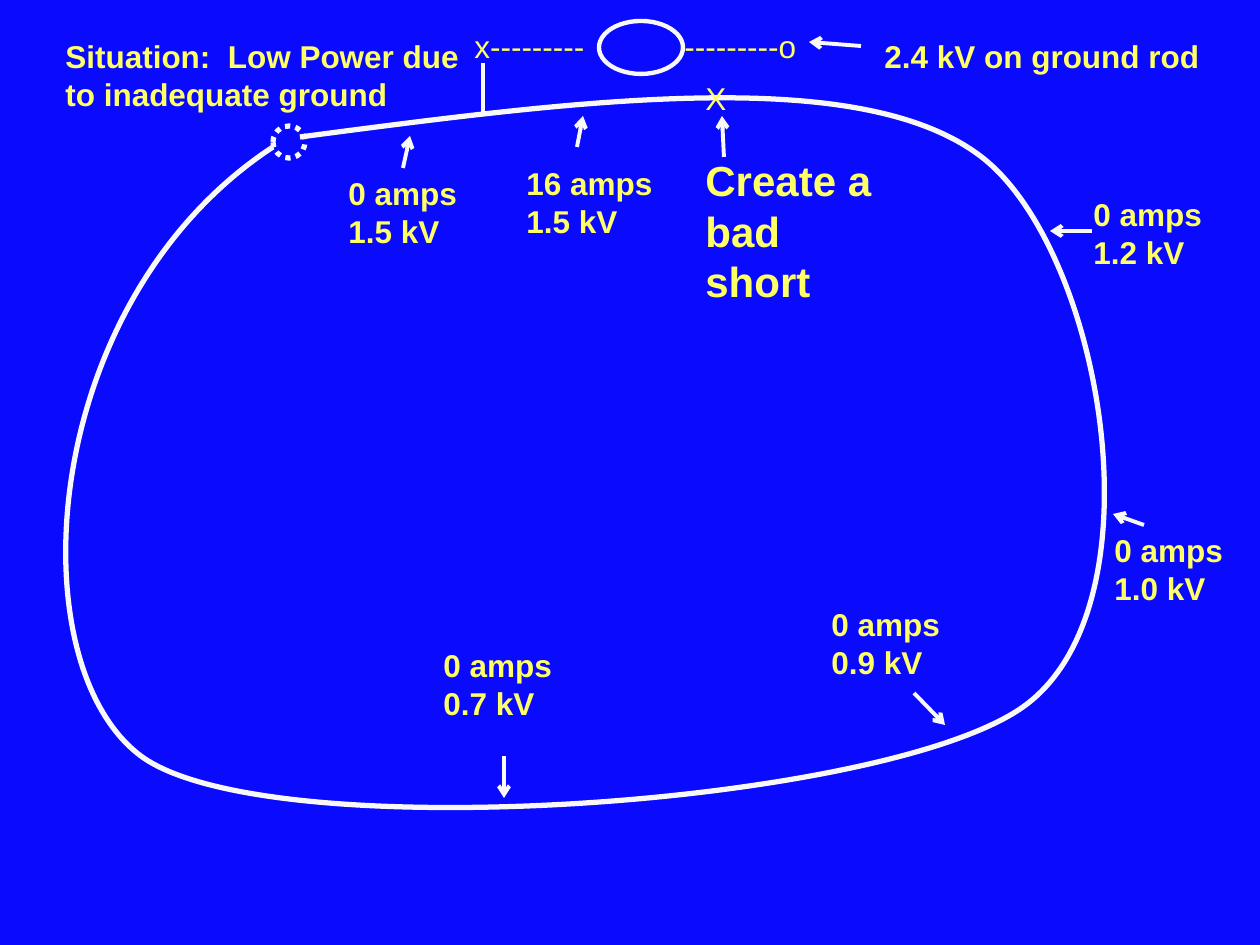
from lxml.etree import SubElement
from pptx import Presentation
from pptx.dml.color import RGBColor
from pptx.enum.dml import MSO_LINE
from pptx.enum.shapes import MSO_CONNECTOR, MSO_SHAPE
from pptx.enum.text import MSO_AUTO_SIZE
from pptx.oxml.ns import qn
from pptx.util import Emu, Pt

SCALE = 914400 / 126
COLORS = {"field": "0A0AFF", "wire": "F8F8F8", "text": "FFFF66"}
PLAIN = {"name": "Arial", "size": Pt(18), "bold": False}
LABEL = PLAIN | {"bold": True}
HEADLINE = LABEL | {"size": Pt(24)}

FENCE_START = (284, 74)
FENCE_CURVES = [
    (565, 37), (846, 0), (967, 95),
    (1087, 190), (1148, 544), (1007, 644),
    (867, 743), (251, 786), (125, 693),
    (0, 600), (22, 238), (257, 84),
]
READINGS = [
    ((1081, 189, 135, 89), ["0 amps", "1.2 kV"], (11, 42), (-31, 42)),
    ((1102, 525, 135, 89), ["0 amps", "1.0 kV"], (42, 0), (11, -11)),
    ((336, 168, 135, 89), ["0 amps", "1.5 kV"], (67, 0), (74, -32)),
    ((514, 158, 152, 89), ["16 amps", "1.5 kV"], (63, -11), (69, -42)),
    ((872, 31, 344, 50), ["2.4 kV on ground rod"], (-11, 15), (-63, 11)),
    ((431, 640, 135, 89), ["0 amps", "0.7 kV"], (73, 116), (73, 158)),
    ((819, 599, 135, 89), ["0 amps", "0.9 kV"], (95, 94), (126, 126)),
]


def px(*lengths):
    """Turn pixel lengths into EMU."""
    return [Emu(round(length * SCALE)) for length in lengths]


def apply(target, values):
    """Set each named attribute of the target."""
    for name, value in values.items():
        setattr(target, name, value)


def color(name):
    """Look up a palette colour."""
    return RGBColor.from_string(COLORS[name])


def draw_outline(shape, width, dash=None):
    """Give a shape a wire-coloured outline and no fill."""
    shape.shadow.inherit = False
    shape.fill.background()
    shape.line.color.rgb = color("wire")
    apply(shape.line, {"width": Pt(width), "dash_style": dash})


def add_ellipse(slide, box, width, dash=None):
    """Add an outlined ellipse."""
    draw_outline(slide.shapes.add_shape(MSO_SHAPE.OVAL, *px(*box)), width, dash)


def add_line(slide, box, start, end, width=2.25, arrow=True):
    """Add a line between two points of the box, with an optional arrowhead."""
    left, top = box[:2]
    points = px(left + start[0], top + start[1], left + end[0], top + end[1])
    connector = slide.shapes.add_connector(MSO_CONNECTOR.STRAIGHT, *points)
    connector.line.color.rgb = color("wire")
    connector.line.width = Pt(width)
    properties = connector._element.spPr
    if arrow:
        SubElement(properties.find(qn("a:ln")), qn("a:tailEnd"), type="arrow")
    SubElement(properties, qn("a:effectLst"))


def add_text(slide, box, lines, font=LABEL, wrap=False):
    """Add a text box with one paragraph for each line and return its frame."""
    frame = slide.shapes.add_textbox(*px(*box)).text_frame
    frame.text = "\n".join(lines)
    apply(frame, {"word_wrap": wrap, "auto_size": MSO_AUTO_SIZE.SHAPE_TO_FIT_TEXT})
    for paragraph in frame.paragraphs:
        apply(paragraph.runs[0].font, font)
        paragraph.runs[0].font.color.rgb = color("text")
    return frame


def draw_fence(slide, box):
    """Draw the curved fence loop with its dotted gate."""
    left, top = box[:2]
    builder = slide.shapes.build_freeform(*FENCE_START, scale=SCALE)
    builder.add_line_segments(FENCE_CURVES, close=False)
    fence = builder.convert_to_shape(*px(left, top))
    segments = list(fence._element.iter(qn("a:lnTo")))
    outline = segments[0].getparent()
    for first in range(0, len(segments), 3):
        curve = SubElement(outline, qn("a:cubicBezTo"))
        for segment in segments[first:first + 3]:
            curve.append(segment[0])
            outline.remove(segment)
    draw_outline(fence, 3)
    add_ellipse(slide, (left + 257, top + 63, 32, 32), 3, MSO_LINE.ROUND_DOT)


def draw_energizer(slide, box):
    """Draw the energizer between its fence lead and ground lead."""
    left, top, _, height = box
    add_ellipse(slide, (left + 137, top, 84, 53), 2.5)
    add_text(slide, (left + 210, top, 420, height), ["---------o"], PLAIN, True)
    add_text(slide, (left, top, 147, height), ["x---------"], PLAIN, True)
    add_line(slide, box, (21, 42), (21, 95), 2.75, arrow=False)


def draw_reading(slide, box, lines, start, end):
    """Draw a meter reading with its pointer."""
    add_text(slide, box, lines)
    add_line(slide, box, start, end)


def draw_short(slide, box):
    """Draw the marked short circuit with its instruction."""
    frame = add_text(slide, box, ["X", "Create a bad", "short"], HEADLINE, True)
    mark = frame.paragraphs[0]
    apply(mark.runs[0].font, PLAIN)
    mark.space_after = Pt(21.6)
    add_line(slide, box, (31, 84), (29, 43))


def draw_situation(slide, box):
    """Write the situation heading."""
    add_text(slide, box, ["Situation:  Low Power due", "to inadequate ground"])


def main():
    """Build and save the slide."""
    presentation = Presentation()
    width, height = px(1260, 945)
    apply(presentation, {"slide_width": width, "slide_height": height})
    slide = presentation.slides.add_slide(presentation.slide_layouts[6])
    slide.background.fill.solid()
    slide.background.fill.fore_color.rgb = color("field")
    draw_fence(slide, (16, 63, 1148, 786))
    draw_energizer(slide, (462, 21, 630, 50))
    for reading in READINGS:
        draw_reading(slide, *reading)
    draw_short(slide, (693, 73, 220, 242))
    draw_situation(slide, (53, 31, 423, 89))
    presentation.save("out.pptx")


if __name__ == "__main__":
    main()
